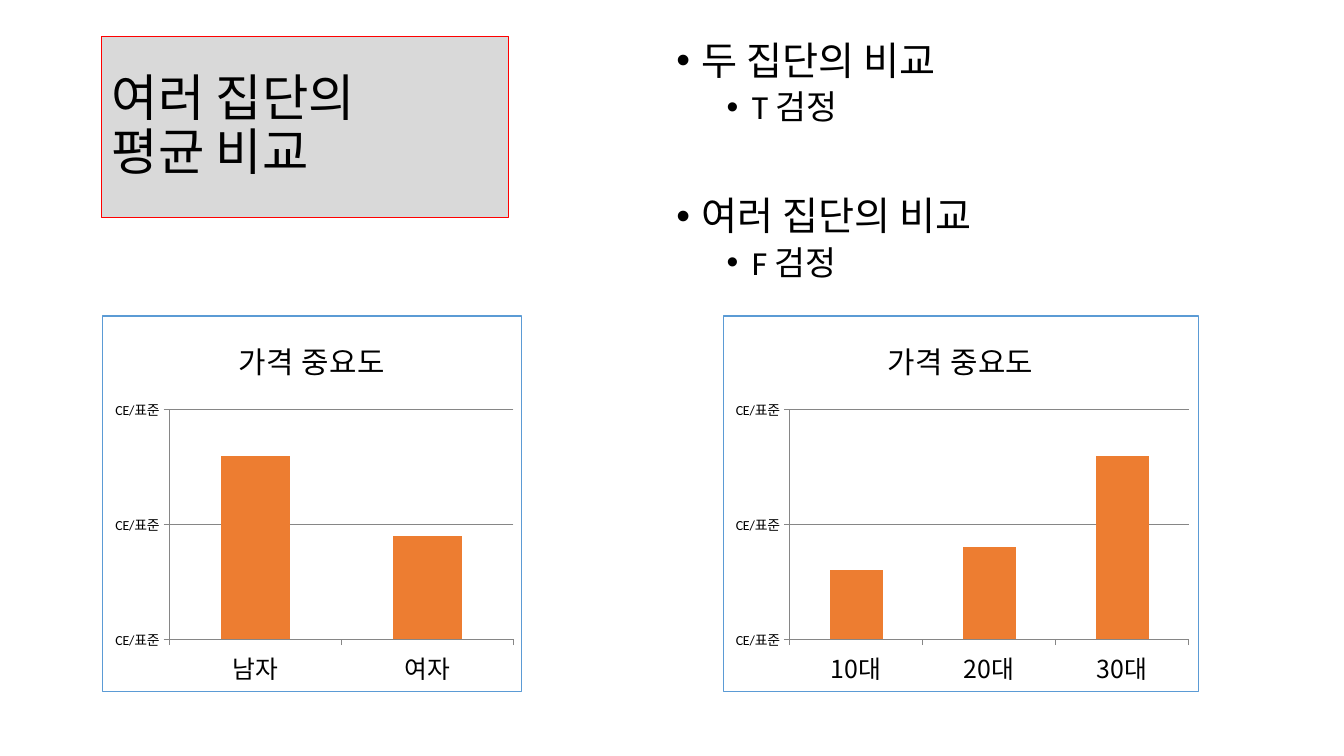
from dataclasses import dataclass

from lxml import etree
from pptx import Presentation
from pptx import util as u
from pptx.chart.data import CategoryChartData
from pptx.dml.color import RGBColor
from pptx.enum import chart as ch, shapes, text
from pptx.oxml import parse_xml
from pptx.oxml.ns import nsdecls, qn


@dataclass(frozen=True)
class Theme:
    font: str = "Calibri"
    category_font: str = "Noto Sans CJK KR"
    ink: str = "000000"
    panel: str = "D9D9D9"
    panel_edge: str = "FF0000"
    bar: str = "ED7D31"
    chart_edge: str = "5B9BD5"
    axis: str = "868686"
    title_size: float = 36
    body_sizes: tuple[float, ...] = (28, 24)
    chart_title_size: float = 21.4
    category_size: float = 17.8
    value_size: float = 9.9


@dataclass(frozen=True)
class Bullet:
    words: str
    level: int
    space_before: float


@dataclass(frozen=True)
class BarChart:
    left: float
    width: float
    categories: tuple[str, ...]
    values: tuple[float, ...]
    low: float
    step: float
    plot_left: float  # plot position and width as shares of the chart width
    plot_width: float


THEME = Theme()
CHART_TOP, CHART_HEIGHT = 3.13, 3.74
PLOT_TOP, PLOT_HEIGHT = 0.25, 0.61
CHART_TITLE = "가격 중요도"
VALUE_FORMAT = 'g/"표""준"'

BULLETS = (
    Bullet("두 집단의 비교", 0, 10),
    Bullet("T 검정", 1, 5),
    Bullet("여러 집단의 비교", 0, 50),
    Bullet("F 검정", 1, 5),
)
CHARTS = (
    BarChart(7.17, 4.72, ("10대", "20대", "30대"), (3.8, 3.9, 4.3), 3.5, 0.5, 0.14, 0.84),
    BarChart(1.01, 4.17, ("남자", "여자"), (4.6, 3.9), 3, 1, 0.16, 0.82),
)


def style_font(font, size: float, name: str = THEME.font) -> None:
    font.size = u.Pt(size)
    font.name = name
    font.bold = False
    font.color.rgb = RGBColor.from_string(THEME.ink)


def add_span(para, words: str, size: float) -> None:
    span = para.add_run()
    span.text = words
    style_font(span.font, size)


def add_title(page) -> None:
    box = page.shapes.add_shape(shapes.MSO_SHAPE.RECTANGLE, u.Inches(1.01),
                                u.Inches(0.36), u.Inches(4.03), u.Inches(1.8))
    box.shadow.inherit = False
    box.fill.solid()
    box.fill.fore_color.rgb = RGBColor.from_string(THEME.panel)
    box.line.color.rgb = RGBColor.from_string(THEME.panel_edge)
    box.line.width = u.Pt(0.75)
    frame = box.text_frame
    frame.word_wrap = True
    frame.vertical_anchor = text.MSO_ANCHOR.MIDDLE
    para = frame.paragraphs[0]
    para.alignment = text.PP_ALIGN.LEFT
    para.line_spacing = 0.9
    add_span(para, "여러 집단의 ", THEME.title_size)
    para.add_line_break()
    add_span(para, "평균 비교", THEME.title_size)


def add_bullets(page, bullets: tuple[Bullet, ...]) -> None:
    box = page.shapes.add_textbox(u.Inches(6.61), u.Inches(0.36),
                                  u.Inches(4.56), u.Inches(2.58))
    frame = box.text_frame
    frame.word_wrap = True
    for index, bullet in enumerate(bullets):
        para = frame.add_paragraph() if index else frame.paragraphs[0]
        para.level = bullet.level
        para.line_spacing = 0.9
        para.space_before = u.Pt(bullet.space_before)
        props = para._p.get_or_add_pPr()
        props.set("marL", str(u.Inches(0.25 + 0.5 * bullet.level)))
        props.set("indent", str(u.Inches(-0.25)))
        etree.SubElement(props, qn("a:buFont"), typeface="Arial")
        etree.SubElement(props, qn("a:buChar"), char="•")
        add_span(para, bullet.words, THEME.body_sizes[bullet.level])


def place_plot(chart, spec_row: BarChart) -> None:
    plot_area = chart._chartSpace.chart.plotArea
    for layout in plot_area.findall(qn("c:layout")):
        plot_area.remove(layout)
    shares = {"x": spec_row.plot_left, "y": PLOT_TOP,
              "w": spec_row.plot_width, "h": PLOT_HEIGHT}
    parts = "".join(f'<c:{key} val="{share}"/>' for key, share in shares.items())
    plot_area.insert(0, parse_xml(
        f'<c:layout {nsdecls("c")}><c:manualLayout><c:layoutTarget val="inner"/>'
        f'<c:xMode val="edge"/><c:yMode val="edge"/>{parts}</c:manualLayout></c:layout>'))


def add_border(chart) -> None:
    chart._chartSpace.chart.addnext(parse_xml(
        f'<c:spPr {nsdecls("c", "a")}><a:noFill/><a:ln w="{u.Pt(0.75)}"><a:solidFill>'
        f'<a:srgbClr val="{THEME.chart_edge}"/></a:solidFill></a:ln></c:spPr>'))


def add_bar_chart(page, row: BarChart) -> None:
    data = CategoryChartData()
    data.categories = row.categories
    data.add_series("Series 1", row.values)
    chart = page.shapes.add_chart(
        ch.XL_CHART_TYPE.COLUMN_CLUSTERED, u.Inches(row.left), u.Inches(CHART_TOP),
        u.Inches(row.width), u.Inches(CHART_HEIGHT), data).chart
    style_font(chart.font, THEME.category_size)
    chart.has_legend = False

    # Chart title
    chart.has_title = True
    chart.chart_title.include_in_layout = False
    add_span(chart.chart_title.text_frame.paragraphs[0], CHART_TITLE,
             THEME.chart_title_size)

    # Bars
    plot = chart.plots[0]
    plot.gap_width = 150
    plot.vary_by_categories = False
    fill = plot.series[0].format.fill
    fill.solid()
    fill.fore_color.rgb = RGBColor.from_string(THEME.bar)

    # Axes
    values, categories = chart.value_axis, chart.category_axis
    values.minimum_scale = row.low
    values.maximum_scale = row.low + 2 * row.step
    values.major_unit = row.step
    values.has_major_gridlines = True
    values.tick_labels.number_format = VALUE_FORMAT
    values.tick_labels.number_format_is_linked = False
    style_font(values.tick_labels.font, THEME.value_size)
    style_font(categories.tick_labels.font, THEME.category_size, THEME.category_font)
    for axis in (values, categories):
        axis.major_tick_mark = ch.XL_TICK_MARK.OUTSIDE
    for part in (values, categories, values.major_gridlines):
        part.format.line.color.rgb = RGBColor.from_string(THEME.axis)
        part.format.line.width = u.Pt(0.75)

    place_plot(chart, row)
    add_border(chart)


def main() -> None:
    deck = Presentation()
    deck.slide_width, deck.slide_height = u.Inches(13.33), u.Inches(7.5)
    page = deck.slides.add_slide(deck.slide_layouts[6])
    add_title(page)
    add_bullets(page, BULLETS)
    for row in CHARTS:
        add_bar_chart(page, row)
    deck.save("out.pptx")


if __name__ == "__main__":
    main()
